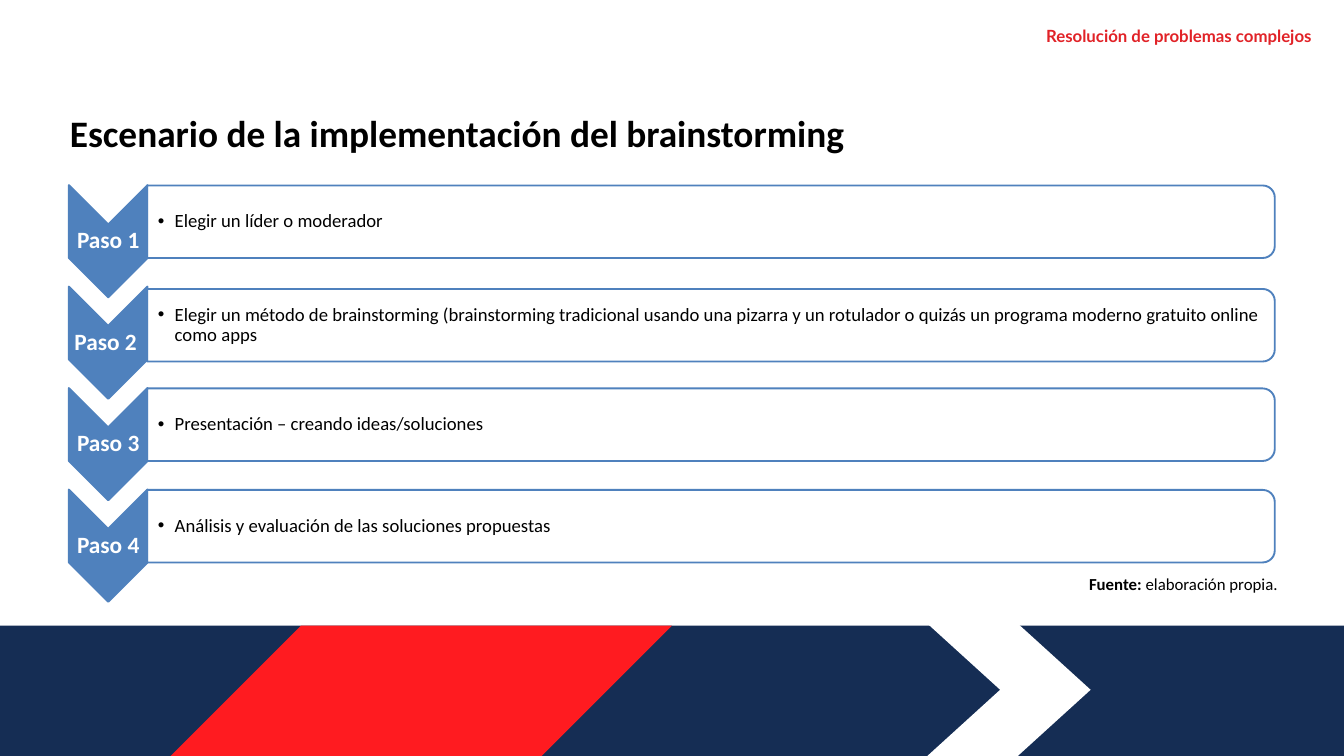
from lxml.etree import SubElement
from pptx import Presentation
from pptx.dml.color import RGBColor
from pptx.enum.shapes import MSO_SHAPE as SHAPE
from pptx.enum.text import MSO_ANCHOR as ANCHOR, MSO_AUTO_SIZE as AUTO_SIZE, PP_ALIGN as ALIGN
from pptx.oxml.ns import qn
from pptx.util import Inches, Pt

NAVY = RGBColor(0x15, 0x2D, 0x54)
RED = RGBColor(0xFF, 0x1B, 0x20)
HEADER_RED = RGBColor(0xE1, 0x22, 0x27)
BLUE = RGBColor(0x4F, 0x81, 0xBD)
WHITE = RGBColor(0xFF, 0xFF, 0xFF)
BLACK = RGBColor(0, 0, 0)

HEADER = "Resolución de problemas complejos"
TITLE = "Escenario de la implementación del brainstorming"
SOURCE = ("Fuente: ", "elaboración propia.")
STEPS = [
    ("Paso 1", "Elegir un líder o moderador", 3.3),
    ("Paso 2 ", "Elegir un método de brainstorming (brainstorming tradicional usando una "
     "pizarra y un rotulador o quizás un programa moderno gratuito online como apps", 4.84),
    ("Paso 3", "Presentación – creando ideas/soluciones", 6.32),
    ("Paso 4", "Análisis y evaluación de las soluciones propuestas", 7.83),
]
FOOTER = [
    (SHAPE.RECTANGLE, (0, 9.31, 20, 1.94), NAVY, None),
    (SHAPE.CHEVRON, (13.8, 9.28, 2.43, 1.97), WHITE, 0.55),
    (SHAPE.PARALLELOGRAM, (2.54, 9.31, 7.46, 1.94), RED, 1),
]
ARROW_X, ARROW_Y, ARROW_PITCH = 1.61, 3.59, 1.51
ARROW_LENGTH, ARROW_WIDTH = 1.67, 1.17
BOX_LEFT, BOX_LENGTH, BOX_HEIGHT = 2.19, 16.78, 1.08
LABEL_HEIGHT, TEXT_WIDTH, TEXT_HEIGHT = 0.5, 16.73, 0.98


def add_shape(slide, kind, box, fill, line=None, adjustment=None):
    shape = slide.shapes.add_shape(kind, *map(Inches, box))
    shape.shadow.inherit = False
    shape.fill.solid()
    shape.fill.fore_color.rgb = fill
    if line is None:
        shape.line.fill.background()
    else:
        shape.line.color.rgb = line
        shape.line.width = Pt(2)
    if adjustment is not None:
        shape.adjustments[0] = adjustment
    return shape


def add_turned_shape(slide, kind, center_x, center_y, width, height, fill):
    box = (center_x - width / 2, center_y - height / 2, width, height)
    shape = add_shape(slide, kind, box, fill, BLUE)
    shape.rotation = 90
    return shape


def format_frame(frame, insets, anchor=ANCHOR.TOP, wrap=True):
    frame.auto_size = AUTO_SIZE.NONE
    frame.word_wrap = wrap
    frame.vertical_anchor = anchor
    frame.margin_left, frame.margin_top, frame.margin_right, frame.margin_bottom = map(Inches, insets)


def format_paragraph(paragraph, size, color, bold=False, align=ALIGN.LEFT, name="Calibri"):
    paragraph.alignment = align
    font = paragraph.font
    font.name, font.size, font.bold = name, Pt(size), bold
    font.color.rgb = color


def add_text(slide, box, text, insets, anchor=ANCHOR.TOP, wrap=True, **style):
    frame = slide.shapes.add_textbox(*map(Inches, box)).text_frame
    format_frame(frame, insets, anchor, wrap)
    paragraph = frame.paragraphs[0]
    paragraph.text = text
    format_paragraph(paragraph, **style)
    return paragraph


def add_bullet(paragraph):
    properties = paragraph._p.get_or_add_pPr()
    properties.set("marL", str(Inches(0.25)))
    properties.set("indent", str(Inches(-0.25)))
    SubElement(properties, qn("a:buFont")).set("typeface", "Arial")
    SubElement(properties, qn("a:buChar")).set("char", "•")


def add_step(slide, index, label, text, box_y):
    arrow_y = ARROW_Y + index * ARROW_PITCH
    add_turned_shape(slide, SHAPE.CHEVRON, ARROW_X, arrow_y, ARROW_LENGTH, ARROW_WIDTH, BLUE)
    label_box = (ARROW_X - ARROW_WIDTH / 2, arrow_y - LABEL_HEIGHT / 2, ARROW_WIDTH, LABEL_HEIGHT)
    paragraph = add_text(slide, label_box, label, (0.02,) * 4, ANCHOR.MIDDLE,
                         size=25, color=WHITE, bold=True, align=ALIGN.CENTER)
    paragraph.line_spacing = 0.9

    panel = add_turned_shape(slide, SHAPE.ROUND_2_SAME_RECTANGLE, BOX_LEFT + BOX_LENGTH / 2,
                             box_y, BOX_HEIGHT, BOX_LENGTH, WHITE)
    color = panel.fill._xPr.find(qn("a:solidFill"))[0]
    SubElement(color, qn("a:alpha")).set("val", "90000")
    text_box = (BOX_LEFT, box_y - TEXT_HEIGHT / 2, TEXT_WIDTH, TEXT_HEIGHT)
    paragraph = add_text(slide, text_box, text, (0.16, 0.01, 0.01, 0.01), ANCHOR.MIDDLE,
                         size=20, color=BLACK)
    paragraph.line_spacing = 0.9
    add_bullet(paragraph)


def main():
    presentation = Presentation()
    presentation.slide_width, presentation.slide_height = Inches(20), Inches(11.25)
    slide = presentation.slides.add_slide(presentation.slide_layouts[5])

    for kind, box, fill, adjustment in FOOTER:
        add_shape(slide, kind, box, fill, adjustment=adjustment)
    for index, (label, text, box_y) in enumerate(STEPS):
        add_step(slide, index, label, text, box_y)

    title = slide.shapes.title
    title.left, title.top, title.width, title.height = map(Inches, (1.03, 1.62, 18.39, 1.12))
    title.text = TITLE
    format_frame(title.text_frame, (0.01, 0.02, 0, 0))
    format_paragraph(title.text_frame.paragraphs[0], 40, BLACK, bold=True)
    title.text_frame.paragraphs[0].space_before = Pt(1)

    add_text(slide, (9, 0.37, 10.52, 0.32), HEADER, (0, 0.01, 0, 0),
             size=18, color=HEADER_RED, bold=True, align=ALIGN.RIGHT, name="Lato")
    lead, detail = SOURCE
    source = add_text(slide, (16.09, 8.49, 3.04, 0.4), lead, (0.1, 0.05, 0.1, 0.05), wrap=False,
                      size=18, color=BLACK, align=ALIGN.CENTER)
    source.runs[0].font.bold = True
    source.add_run().text = detail

    presentation.save("out.pptx")


if __name__ == "__main__":
    main()
